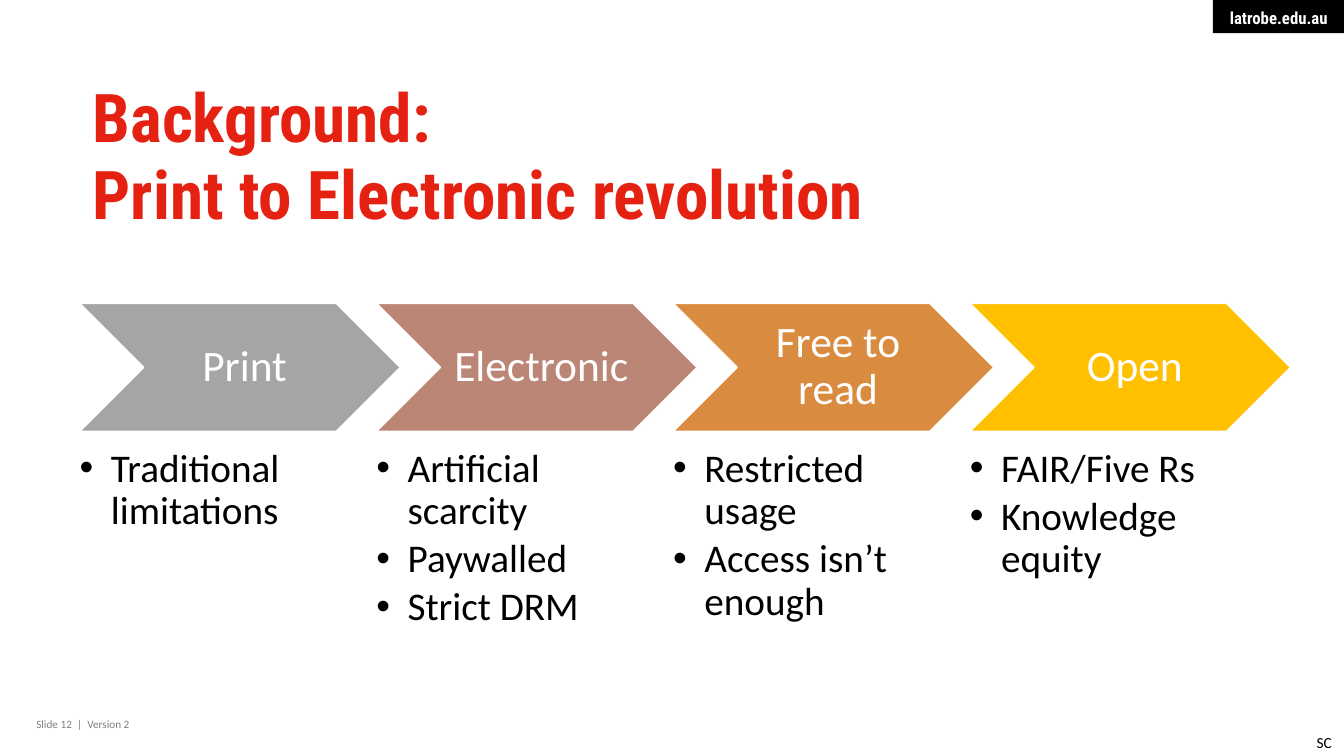
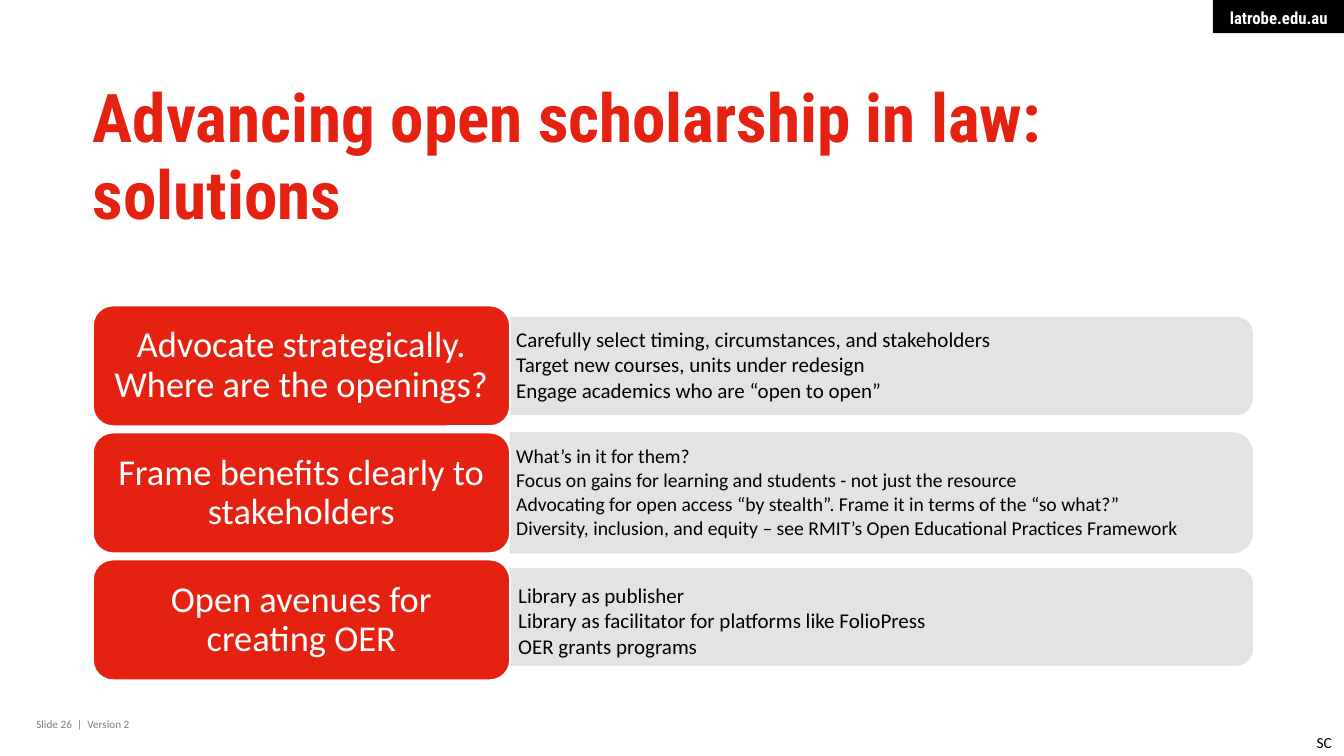
from collections import namedtuple
from dataclasses import dataclass

from lxml.etree import SubElement
from pptx import Presentation
from pptx.dml.color import RGBColor
from pptx.enum.shapes import MSO_SHAPE as Preset
from pptx.enum.text import MSO_ANCHOR as Anchor, MSO_AUTO_SIZE as AutoSize, PP_ALIGN as Align
from pptx.oxml.ns import qn
from pptx.util import Emu, Pt

SCALE = 9144

Box = namedtuple("Box", "left top width height")
Stage = namedtuple("Stage", "name color points")
Solution = namedtuple("Solution", "name points size panel_height panel_shift text_left text_shift")


@dataclass(frozen=True)
class Theme:
    body_font: str = "Calibri"
    title_font: str = "Roboto Condensed"
    red: str = "E52212"
    black: str = "000000"
    white: str = "FFFFFF"
    gray: str = "7F7F7F"
    panel: str = "E1E1E1"
    panel_alpha: int = 90
    title_size: int = 48
    title_leading: int = 55
    stage_size: int = 31
    bullet_size: int = 28
    solution_size: int = 26
    address_size: int = 12
    initials_size: int = 11
    footer_size: int = 8
    tight: float = 0.9


THEME = Theme()
SLIDE = Box(0, 0, 1333, 750)
TITLE = Box(92, 78, 1150, 145)
STAGES_BOX = Box(79, 301, 1201, 332)
SOLUTIONS_BOX = Box(92, 303, 1150, 372)

STAGES = [
    Stage("Print", "A5A5A5", ["Traditional limitations"]),
    Stage("Electronic", "BB8676", ["Artificial scarcity", "Paywalled", "Strict DRM"]),
    Stage("Free to read", "D98C3F", ["Restricted usage", "Access isn’t enough"]),
    Stage("Open", "FFC000", ["FAIR/Five Rs", "Knowledge equity"]),
]

SOLUTIONS = [
    Solution(
        "Advocate strategically. Where are the openings?",
        [
            "Carefully select timing, circumstances, and stakeholders",
            "Target new courses, units under redesign",
            "Engage academics who are “open to open”",
        ],
        15, 96, 0, 0, 0,
    ),
    Solution(
        "Frame benefits clearly to stakeholders",
        [
            "What’s in it for them?",
            "Focus on gains for learning and students - not just the resource",
            "Advocating for open access “by stealth”. Frame it in terms of the “so what?”",
            "Diversity, inclusion, and equity – see RMIT’s Open Educational Practices Framework",
        ],
        14, 119, 0, 0, 0,
    ),
    Solution(
        "Open avenues for creating OER",
        [
            "Library as publisher",
            "Library as facilitator for platforms like FolioPress",
            "OER grants programs",
        ],
        15, 96, -3, 2, 2,
    ),
]


def px(length):
    return Emu(round(length * SCALE))


def emu_box(box):
    return [px(length) for length in box]


def write(shape, lines, size, color, font=THEME.body_font, bold=False, align=Align.LEFT,
          anchor=Anchor.TOP, insets=(0, 0, 0, 0), spacing=None, after=0, bullet_indent=0, wrap=True):
    frame = shape.text_frame
    frame.word_wrap = wrap
    frame.auto_size = AutoSize.NONE
    frame.vertical_anchor = anchor
    frame.margin_left, frame.margin_top, frame.margin_right, frame.margin_bottom = emu_box(insets)
    for index, line in enumerate(lines):
        paragraph = frame.add_paragraph() if index else frame.paragraphs[0]
        paragraph.text = line
        if bullet_indent:
            properties = paragraph._p.get_or_add_pPr()
            properties.set("marL", str(px(bullet_indent)))
            properties.set("indent", str(px(-bullet_indent)))
            SubElement(properties, qn("a:buFont"), typeface="Arial")
            SubElement(properties, qn("a:buChar"), char="•")
        paragraph.alignment = align
        paragraph.line_spacing = spacing
        paragraph.space_after = Pt(after)
        paragraph.font.name = font
        paragraph.font.size = Pt(size)
        paragraph.font.bold = bold
        paragraph.font.color.rgb = RGBColor.from_string(color)


def add_text(slide, box, lines, size, color, **style):
    write(slide.shapes.add_textbox(*emu_box(box)), lines, size, color, **style)


def add_block(slide, preset, box, fill, line=None, line_width=1):
    shape = slide.shapes.add_shape(preset, *emu_box(box))
    shape.shadow.inherit = False
    shape.fill.solid()
    shape.fill.fore_color.rgb = RGBColor.from_string(fill)
    if line:
        shape.line.color.rgb = RGBColor.from_string(line)
        shape.line.width = Pt(line_width)
    else:
        shape.line.fill.background()
    return shape


def add_frame(slide, title, number):
    address = add_block(slide, Preset.RECTANGLE, Box(SLIDE.width - 130, 0, 130, 33), THEME.black)
    write(address, ["latrobe.edu.au"], THEME.address_size, THEME.white, font=THEME.title_font,
          bold=True, align=Align.RIGHT, insets=(16, 8, 16, 5), wrap=False)
    add_text(slide, Box(36, 707, 269, 24), [f"Slide {number}  |  Version 2"],
             THEME.footer_size, THEME.gray, insets=(0, 5, 10, 5))
    add_text(slide, TITLE, [title], THEME.title_size, THEME.red, font=THEME.title_font,
             bold=True, spacing=Pt(THEME.title_leading))
    add_text(slide, Box(SLIDE.width - 37, 722, 37, 29), ["SC"],
             THEME.initials_size, THEME.black, insets=(10, 5, 10, 5), wrap=False)


def add_stages(slide, box, stages):
    width, height, list_top = 318, 127, 144
    pitch = (box.width - width) / (len(stages) - 1)
    for index, stage in enumerate(stages):
        left = box.left + index * pitch
        chevron = add_block(slide, Preset.CHEVRON, Box(left, box.top, width, height),
                            stage.color, THEME.white)
        write(chevron, [stage.name], THEME.stage_size, THEME.white, align=Align.CENTER,
              anchor=Anchor.MIDDLE, insets=(10, 5, 1, 5), spacing=THEME.tight)
        add_text(slide, Box(left, box.top + list_top, 254, box.height - list_top), stage.points,
                 THEME.bullet_size, THEME.black, spacing=THEME.tight, after=4, bullet_indent=31)


def add_panel(slide, box):
    center_x = box.left + box.width / 2
    center_y = box.top + box.height / 2
    upright = Box(center_x - box.height / 2, center_y - box.width / 2, box.height, box.width)
    panel = add_block(slide, Preset.ROUND_2_SAME_RECTANGLE, upright, THEME.panel, THEME.panel)
    panel.rotation = 90
    for color in panel._element.spPr.iter(qn("a:srgbClr")):
        SubElement(color, qn("a:alpha"), val=str(THEME.panel_alpha * 1000))


def add_solutions(slide, box, solutions):
    gap, label_width = 6, 414
    height = (box.height - gap * (len(solutions) - 1)) / len(solutions)
    panel_left = box.left + label_width
    panel_width = box.width - label_width
    for index, solution in enumerate(solutions):
        top = box.top + index * (height + gap)
        panel_top = top + (height - solution.panel_height) / 2 + solution.panel_shift
        add_panel(slide, Box(panel_left, panel_top, panel_width, solution.panel_height))
        add_text(slide, Box(panel_left + solution.text_left, top + solution.text_shift, 731, height),
                 solution.points, solution.size, THEME.black, anchor=Anchor.MIDDLE,
                 insets=(6, 3, 6, 3), spacing=THEME.tight, after=2)
        label = add_block(slide, Preset.ROUNDED_RECTANGLE, Box(box.left, top, label_width, height),
                          THEME.red, THEME.white, 1.5)
        write(label, [solution.name], THEME.solution_size, THEME.white, align=Align.CENTER,
              anchor=Anchor.MIDDLE, insets=(11, 5, 11, 5), spacing=THEME.tight)


def main():
    presentation = Presentation()
    presentation.slide_width = px(SLIDE.width)
    presentation.slide_height = px(SLIDE.height)
    blank = presentation.slide_layouts[6]

    revolution = presentation.slides.add_slide(blank)
    add_frame(revolution, "Background:\vPrint to Electronic revolution", 12)
    add_stages(revolution, STAGES_BOX, STAGES)

    scholarship = presentation.slides.add_slide(blank)
    add_frame(scholarship, "Advancing open scholarship in law:\vsolutions", 26)
    add_solutions(scholarship, SOLUTIONS_BOX, SOLUTIONS)

    presentation.save("out.pptx")


if __name__ == "__main__":
    main()
